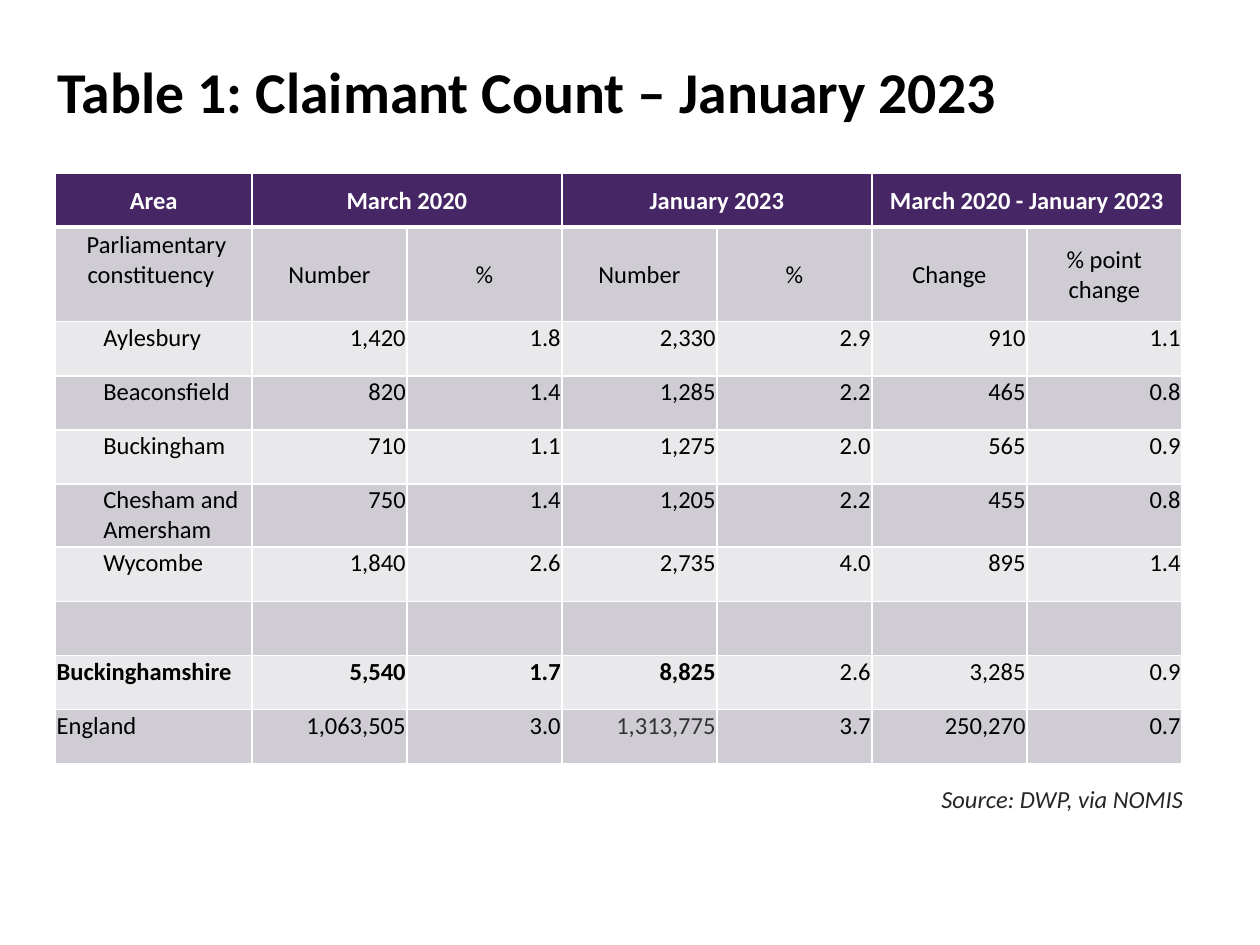
from lxml import etree
from pptx import Presentation
from pptx.dml.color import RGBColor
from pptx.enum.text import MSO_ANCHOR, PP_ALIGN
from pptx.oxml.ns import qn
from pptx.util import Inches, Pt

LEFT, MID, RIGHT = PP_ALIGN.LEFT, PP_ALIGN.CENTER, PP_ALIGN.RIGHT
TOP, CENTRE = MSO_ANCHOR.TOP, MSO_ANCHOR.MIDDLE

FONT = "Calibri"
WIDE, HIGH = 10, 7.5
HUES = {
    "head": "472665",
    "dark": "CFCDD3",
    "light": "E9E8EA",
    "white": "FFFFFF",
    "black": "000000",
    "grey": "333333",
    "note": "262626",
}
COLS = [1.56] + [1.23] * 6
ROWS = [0.43, 0.75] + [0.43] * 3 + [0.5] + [0.43] * 4
DATA = [
    ["Area", "March 2020", "", "January 2023", "", "March 2020 - January 2023", ""],
    [" Parliamentary constituency ", "Number", "%", "Number", "%", "Change", "% point change"],
    ["Aylesbury", "1,420", "1.8", "2,330", "2.9", "910", "1.1"],
    ["Beaconsfield", "820", "1.4", "1,285", "2.2", "465", "0.8"],
    ["Buckingham", "710", "1.1", "1,275", "2.0", "565", "0.9"],
    ["Chesham and Amersham", "750", "1.4", "1,205", "2.2", "455", "0.8"],
    ["Wycombe", "1,840", "2.6", "2,735", "4.0", "895", "1.4"],
    [""] * 7,
    ["Buckinghamshire", "5,540", "1.7", "8,825", "2.6", "3,285", "0.9"],
    ["England", "1,063,505", "3.0", "1,313,775", "3.7", "250,270", "0.7"],
]
HEAD, SUB, TOTAL, LAST = 0, 1, 8, 9
AREAS = range(2, 7)


def style(font, size, hue, bold=False, slant=False):
    """Set the face, size, colour and weight of a font."""
    font.name, font.size = FONT, Pt(size)
    font.bold, font.italic = bold, slant
    font.color.rgb = RGBColor.from_string(HUES[hue])


def write(para, text, align, *look):
    """Add one styled run to a paragraph."""
    para.alignment = align
    run = para.add_run()
    run.text = text
    style(run.font, *look)


def label(slide, box, text, align, anchor, *look):
    """Place a text box given as shares of the slide."""
    x, y, w, h = box
    shape = slide.shapes.add_textbox(
        Inches(x * WIDE), Inches(y * HIGH), Inches(w * WIDE), Inches(h * HIGH))
    frame = shape.text_frame
    frame.word_wrap = True
    frame.vertical_anchor = anchor
    write(frame.paragraphs[0], text, align, *look)
    return frame


def edge(cell, row):
    """Draw white borders, thick below the header row."""
    props = cell._tc.get_or_add_tcPr()
    thick = {HEAD: "lnB", SUB: "lnT"}.get(row)
    for side in ("lnL", "lnR", "lnT", "lnB"):
        width = Pt(3 if side == thick else 1)
        line = etree.SubElement(props, qn("a:" + side), w=str(width))
        fill = etree.SubElement(line, qn("a:solidFill"))
        etree.SubElement(fill, qn("a:srgbClr"), val=HUES["white"])


def paint(cell, row):
    """Fill a cell with its header or band colour."""
    hue = "head" if row == HEAD else "dark" if row % 2 else "light"
    cell.fill.solid()
    cell.fill.fore_color.rgb = RGBColor.from_string(HUES[hue])


def enter(cell, row, col, text):
    """Write a cell's text in the style of its row and column."""
    top = row in (HEAD, SUB)
    cell.vertical_anchor = CENTRE if top else TOP
    cell.margin_left = cell.margin_right = cell.margin_top = Inches(0.01)
    cell.margin_bottom = Inches(0.24 if (row, col) == (SUB, 0) else 0)
    para = cell.text_frame.paragraphs[0]
    if not text:
        para.font.size = Pt(14)
        return
    if row in AREAS and col == 0:
        para.level = 1
        para._p.get_or_add_pPr().set("marL", str(Inches(0.37)))
    align = MID if top else RIGHT if col else LEFT
    hue = "white" if row == HEAD else "grey" if (row, col) == (LAST, 3) else "black"
    bold = row == HEAD or (row == TOTAL and col < 4)
    write(para, text, align, 14, hue, bold)


def grid(slide, x, y):
    """Build the claimant table at a share of the slide."""
    table = slide.shapes.add_table(
        len(ROWS), len(COLS), Inches(x * WIDE), Inches(y * HIGH),
        Inches(sum(COLS)), Inches(sum(ROWS))).table
    for col, width in zip(table.columns, COLS):
        col.width = Inches(width)
    for row, height in zip(table.rows, ROWS):
        row.height = Inches(height)
    for r, line in enumerate(DATA):
        for c, text in enumerate(line):
            cell = table.cell(r, c)
            edge(cell, r)
            paint(cell, r)
            enter(cell, r, c, text)
    for c in range(1, len(COLS), 2):
        table.cell(HEAD, c).merge(table.cell(HEAD, c + 1))


def main():
    """Build and save the slide."""
    deck = Presentation()
    deck.slide_width, deck.slide_height = Inches(WIDE), Inches(HIGH)
    slide = deck.slides.add_slide(deck.slide_layouts[6])
    title = label(slide, (0.036, 0.032, 0.862, 0.136),
                  "Table 1: Claimant Count – January 2023", LEFT, CENTRE, 33, "black", True)
    title.paragraphs[0].line_spacing = 0.9
    grid(slide, 0.044, 0.183)
    label(slide, (0.711, 0.823, 0.238, 0.045),
          "Source: DWP, via NOMIS", RIGHT, TOP, 14, "note", False, True)
    deck.save("out.pptx")


if __name__ == "__main__":
    main()
